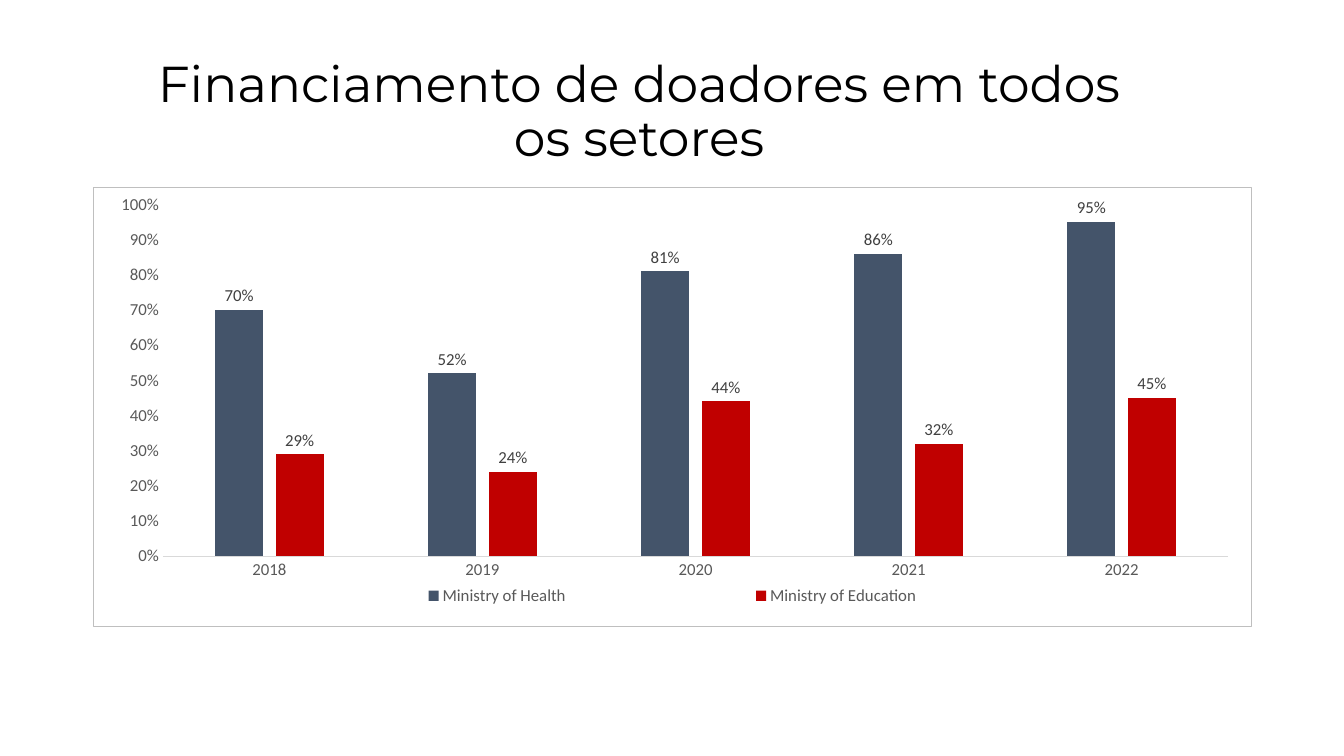
from lxml import etree
from pptx import Presentation
from pptx.chart.data import CategoryChartData
from pptx.dml.color import RGBColor
from pptx.enum.chart import XL_CHART_TYPE, XL_LABEL_POSITION, XL_LEGEND_POSITION, XL_TICK_MARK
from pptx.enum.text import MSO_ANCHOR, PP_ALIGN
from pptx.oxml import parse_xml
from pptx.oxml.ns import nsdecls, qn
from pptx.util import Cm, Pt

COLUMNS = XL_CHART_TYPE.COLUMN_CLUSTERED
OUTSIDE = XL_LABEL_POSITION.OUTSIDE_END
BOTTOM = XL_LEGEND_POSITION.BOTTOM
NO_TICK = XL_TICK_MARK.NONE
MIDDLE = MSO_ANCHOR.MIDDLE
CENTER = PP_ALIGN.CENTER

TITLE = "Financiamento de doadores em todos os setores"
YEARS = ["2018", "2019", "2020", "2021", "2022"]
SERIES = [
    ("Ministry of Health", "health", [0.70, 0.52, 0.81, 0.86, 0.95]),
    ("Ministry of Education", "education", [0.29, 0.24, 0.44, 0.32, 0.45]),
]
COLORS = {
    "title": "000000", "health": "44546A", "education": "C00000",
    "axis_text": "595959", "label": "404040", "axis_line": "D9D9D9",
    "border": "BFBFBF", "background": "FFFFFF",
}
TITLE_BOX = (Cm(3.48), Cm(1.02), Cm(25.25), Cm(3.68))
CHART_BOX = (Cm(2.34), Cm(4.7), Cm(29.21), Cm(11.1))
PLOT_LAYOUT = {"x": 0.06, "y": 0.04, "w": 0.92, "h": 0.8}
LEGEND_LAYOUT = {"x": 0.13, "y": 0.9, "w": 0.74, "h": 0.06}


def rgb(name):
    return RGBColor.from_string(COLORS[name])


def set_font(font, color, size=12, face="Calibri"):
    font.name, font.size, font.bold = face, Pt(size), False
    font.color.rgb = rgb(color)


def set_layout(parent, before, layout, inner=False):
    for old in parent.findall(qn("c:layout")):
        parent.remove(old)
    node = parse_xml(f"<c:layout {nsdecls('c')}><c:manualLayout/></c:layout>")
    manual = node[0]
    tags = [("layoutTarget", "inner")] if inner else []
    tags += [("xMode", "edge"), ("yMode", "edge"), *layout.items()]
    for tag, value in tags:
        etree.SubElement(manual, qn(f"c:{tag}")).set("val", str(value))
    parent.find(qn(before)).addprevious(node)


def add_title(slide):
    tf = slide.shapes.add_textbox(*TITLE_BOX).text_frame
    tf.word_wrap = True
    tf.vertical_anchor = MIDDLE
    p = tf.paragraphs[0]
    p.text = TITLE
    p.alignment = CENTER
    p.line_spacing = 0.9
    set_font(p.runs[0].font, "title", 36, "Montserrat")


def add_funding_chart(slide):
    data = CategoryChartData(number_format="0%")
    data.categories = YEARS
    for name, _, values in SERIES:
        data.add_series(name, values)
    chart = slide.shapes.add_chart(COLUMNS, *CHART_BOX, data).chart
    chart.has_title = False
    set_font(chart.font, "title")

    plot = chart.plots[0]
    plot.gap_width, plot.overlap, plot.vary_by_categories = 219, -27, False
    for series, (_, color, _) in zip(plot.series, SERIES):
        series.format.fill.solid()
        series.format.fill.fore_color.rgb = rgb(color)
        labels = series.data_labels
        labels.show_value = True
        labels.number_format, labels.number_format_is_linked = "0%", False
        labels.position = OUTSIDE
        set_font(labels.font, "label")

    for axis in (chart.category_axis, chart.value_axis):
        axis.major_tick_mark = axis.minor_tick_mark = NO_TICK
        axis.has_major_gridlines = False
        set_font(axis.tick_labels.font, "axis_text")
    line = chart.category_axis.format.line
    line.color.rgb, line.width = rgb("axis_line"), Pt(0.75)
    values = chart.value_axis
    values.format.line.fill.background()
    values.minimum_scale, values.maximum_scale, values.major_unit = 0, 1, 0.1
    values.tick_labels.number_format = "0%"
    values.tick_labels.number_format_is_linked = False

    chart.has_legend = True
    legend = chart.legend
    legend.position, legend.include_in_layout = BOTTOM, False
    set_font(legend.font, "axis_text")
    space = chart.element
    set_layout(space.find(f".//{qn('c:plotArea')}"), "c:barChart", PLOT_LAYOUT, True)
    set_layout(space.find(f".//{qn('c:legend')}"), "c:overlay", LEGEND_LAYOUT)
    space.find(qn("c:txPr")).addprevious(parse_xml(
        f"<c:spPr {nsdecls('c', 'a')}>"
        f"<a:solidFill><a:srgbClr val='{COLORS['background']}'/></a:solidFill>"
        f"<a:ln w='{Pt(0.75)}'><a:solidFill><a:srgbClr val='{COLORS['border']}'/>"
        "</a:solidFill></a:ln></c:spPr>"))


def main():
    """Build the slide on donor funding by sector."""
    prs = Presentation()
    prs.slide_width, prs.slide_height = Cm(33.87), Cm(19.05)
    slide = prs.slides.add_slide(prs.slide_layouts[6])
    add_title(slide)
    add_funding_chart(slide)
    prs.save("out.pptx")


if __name__ == "__main__":
    main()
